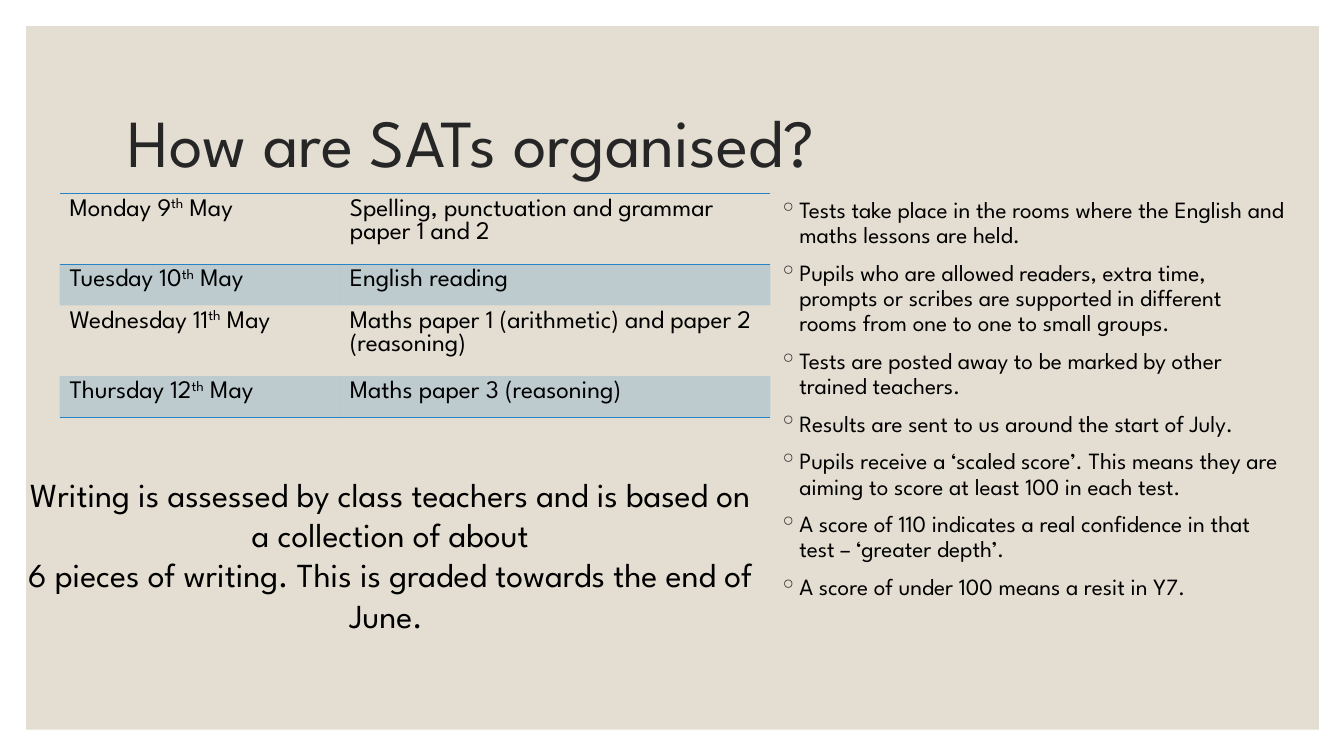
import dataclasses
import typing

import lxml.etree
import pptx
import pptx.dml.color
import pptx.enum.shapes
import pptx.enum.text
import pptx.oxml
import pptx.oxml.ns
import pptx.util

Inches = pptx.util.Inches
Alignment = pptx.enum.text.PP_ALIGN
Anchor = pptx.enum.text.MSO_ANCHOR
qn = pptx.oxml.ns.qn

FONT = "League Spartan"
SAND, INK, BLACK, BLUE = "E3DED1", "262626", "000000", "2683C6"


@dataclasses.dataclass
class TestDay:
    day: str
    paper: str
    height: float
    shaded: bool
    line_above: bool = False
    line_below: bool = False


TEST_DAYS = [
    TestDay("Monday 9", "Spelling, punctuation and grammar paper 1 and 2", 0.7, False,
            line_above=True, line_below=True),
    TestDay("Tuesday 10", "English reading", 0.41, True, line_above=True),
    TestDay("Wednesday 11", "Maths paper 1 (arithmetic) and paper 2 (reasoning)", 0.7, False),
    TestDay("Thursday 12", "Maths paper 3 (reasoning)", 0.41, True, line_below=True),
]
FACTS = [
    "Tests take place in the rooms where the English and maths lessons are held.",
    "Pupils who are allowed readers, extra time, prompts or scribes are supported in "
    "different rooms from one to one to small groups.",
    "Tests are posted away to be marked by other trained teachers.",
    "Results are sent to us around the start of July.",
    "Pupils receive a ‘scaled score’. This means they are aiming to score at least 100 "
    "in each test.",
    "A score of 110 indicates a real confidence in that test – ‘greater depth’.",
    "A score of under 100 means a resit in Y7.",
]
WRITING = [
    "Writing is assessed by class teachers and is based on a collection of about",
    "6 pieces of writing. This is graded towards the end of June. ",
]


def color(value: str) -> pptx.dml.color.RGBColor:
    return pptx.dml.color.RGBColor.from_string(value)


def add_run(paragraph: typing.Any, text: str, *, size: float, fill: str = BLACK,
            raised: bool = False) -> None:
    run = paragraph.add_run()
    run.text = text
    run.font.name = FONT
    run.font.size = pptx.util.Pt(size)
    run.font.color.rgb = color(fill)
    if raised:
        run._r.get_or_add_rPr().set("baseline", "30000")


def add_bullet(paragraph: typing.Any) -> None:
    properties = paragraph._p.get_or_add_pPr()
    properties.set("marL", str(Inches(0.2)))
    properties.set("indent", str(Inches(-0.2)))
    bullet_color = lxml.etree.SubElement(properties, qn("a:buClr"))
    lxml.etree.SubElement(bullet_color, qn("a:srgbClr"), val=INK)
    lxml.etree.SubElement(properties, qn("a:buChar"), char="◦")


def add_text(slide: typing.Any, texts: list[str], box: tuple[float, float, float, float], *,
             size: float, fill: str = BLACK, align: typing.Any = Alignment.LEFT,
             anchor: typing.Any = Anchor.TOP, line_spacing: float = 1.0,
             space_before: float = 0, bulleted: bool = False) -> None:
    shape = slide.shapes.add_textbox(*map(Inches, box))
    frame = shape.text_frame
    frame.word_wrap = True
    frame.vertical_anchor = anchor
    for index, text in enumerate(texts):
        paragraph = frame.add_paragraph() if index else frame.paragraphs[0]
        paragraph.alignment = align
        paragraph.line_spacing = line_spacing
        paragraph.space_before = pptx.util.Pt(space_before)
        if bulleted:
            add_bullet(paragraph)
        add_run(paragraph, text, size=size, fill=fill)


def set_borders(cell: typing.Any, above: bool, below: bool) -> None:
    properties = cell._tc.get_or_add_tcPr()
    sides = {"a:lnL": False, "a:lnR": False, "a:lnT": above, "a:lnB": below}
    for index, (tag, visible) in enumerate(sides.items()):
        line = pptx.oxml.parse_xml(f"<{tag} {pptx.oxml.ns.nsdecls('a')}/>")
        if visible:
            line.set("w", str(pptx.util.Pt(1)))
            solid = lxml.etree.SubElement(line, qn("a:solidFill"))
            lxml.etree.SubElement(solid, qn("a:srgbClr"), val=BLUE)
        else:
            lxml.etree.SubElement(line, qn("a:noFill"))
        properties.insert(index, line)


def format_cell(cell: typing.Any, test_day: TestDay) -> None:
    if test_day.shaded:
        cell.fill.solid()
        cell.fill.fore_color.rgb = color(BLUE)
        tint = cell._tc.tcPr.find(".//" + qn("a:srgbClr"))
        lxml.etree.SubElement(tint, qn("a:alpha"), val="20000")
    else:
        cell.fill.background()
    set_borders(cell, test_day.line_above, test_day.line_below)


def add_timetable(slide: typing.Any) -> None:
    height = sum(test_day.height for test_day in TEST_DAYS)
    frame = slide.shapes.add_table(len(TEST_DAYS), 2, Inches(0.59), Inches(1.92),
                                   Inches(7.05), Inches(height))
    table = frame.table
    table.first_row = table.horz_banding = False
    for column, width in zip(table.columns, (2.78, 4.27)):
        column.width = Inches(width)
    for row, test_day in zip(table.rows, TEST_DAYS):
        row.height = Inches(test_day.height)
        day_cell, paper_cell = row.cells
        day = day_cell.text_frame.paragraphs[0]
        add_run(day, test_day.day, size=18)
        add_run(day, "th", size=18, raised=True)
        add_run(day, " May", size=18)
        add_run(paper_cell.text_frame.paragraphs[0], test_day.paper, size=18)
        for cell in row.cells:
            format_cell(cell, test_day)


def main() -> None:
    presentation = pptx.Presentation()
    presentation.slide_width = Inches(13.33)
    presentation.slide_height = Inches(7.5)
    slide = presentation.slides.add_slide(presentation.slide_layouts[6])

    # Sand panel inside a white margin
    panel = slide.shapes.add_shape(pptx.enum.shapes.MSO_SHAPE.RECTANGLE, Inches(0.26),
                                   Inches(0.26), Inches(12.82), Inches(6.98))
    panel.shadow.inherit = False
    panel.fill.solid()
    panel.fill.fore_color.rgb = color(SAND)
    panel.line.fill.background()

    # Title, facts and the note on writing
    add_text(slide, ["How are SATs organised?"], (1.17, 0.7, 11, 1.5), size=48, fill=INK,
             anchor=Anchor.MIDDLE, line_spacing=0.9)
    add_text(slide, FACTS, (7.63, 1.92, 5.2, 5.06), size=16.6, line_spacing=0.9,
             space_before=9, bulleted=True)
    add_text(slide, WRITING, (0.16, 4.65, 7.42, 1.72), size=24, align=Alignment.CENTER)

    # Test timetable
    add_timetable(slide)
    presentation.save("out.pptx")


if __name__ == "__main__":
    main()
